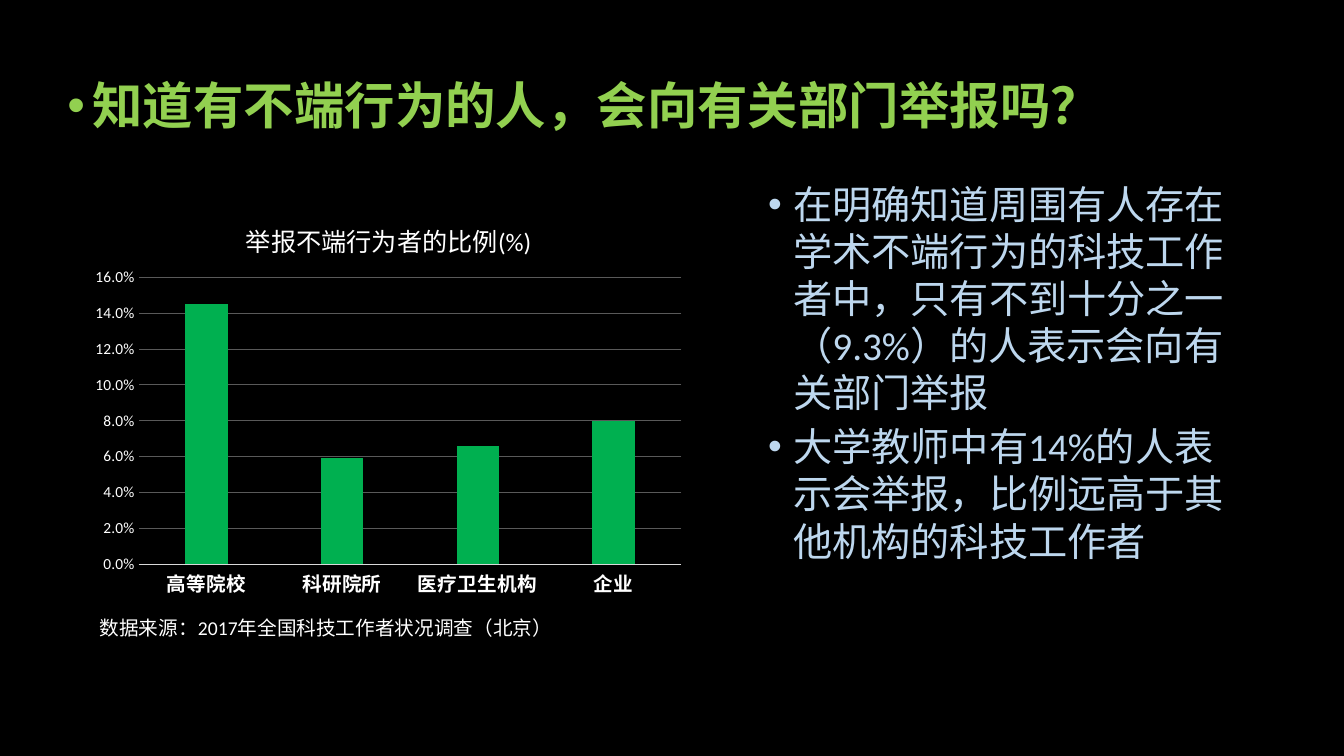
from lxml import etree
from pptx import Presentation
from pptx.chart.data import CategoryChartData
from pptx.dml.color import RGBColor
from pptx.enum.chart import XL_CHART_TYPE, XL_TICK_MARK
from pptx.oxml import parse_xml
from pptx.oxml.ns import nsdecls, qn
from pptx.util import Inches, Pt

COLUMN = XL_CHART_TYPE.COLUMN_CLUSTERED
NO_TICK = XL_TICK_MARK.NONE
BLACK = RGBColor(0x00, 0x00, 0x00)
WHITE = RGBColor(0xFF, 0xFF, 0xFF)
LIME = RGBColor(0x92, 0xD0, 0x50)
GREEN = RGBColor(0x00, 0xB0, 0x50)
PALE_BLUE = RGBColor(0xBD, 0xD7, 0xEE)
AXIS_GREY = RGBColor(0xD9, 0xD9, 0xD9)
GRID_GREY = RGBColor(0x59, 0x59, 0x59)
LATIN, CJK = "Calibri", "Noto Sans CJK SC"


def style_font(font, size, color, name=LATIN, bold=False):
    font.size, font.bold, font.name = Pt(size), bold, name
    font.color.rgb = color


def add_text(box, paragraphs, size, color, name=LATIN, bold=False, indent=None, before=0, spacing=1.0):
    """Add a text box; an indent (inches) makes its paragraphs bulleted."""
    tf = s.shapes.add_textbox(*[Inches(v) for v in box]).text_frame
    tf.word_wrap = True
    for i, text in enumerate(paragraphs):
        p = tf.add_paragraph() if i else tf.paragraphs[0]
        p.text = text
        p.space_before, p.line_spacing = Pt(before), spacing
        font = p.runs[0].font
        style_font(font, size, color, name, bold)
        etree.SubElement(p.runs[0]._r.get_or_add_rPr(), qn("a:ea")).set("typeface", CJK)
        if indent:
            pPr = p._p.get_or_add_pPr()
            pPr.set("marL", str(Inches(indent)))
            pPr.set("indent", str(Inches(-0.25)))
            etree.SubElement(pPr, qn("a:buFont")).set("typeface", "Arial")
            etree.SubElement(pPr, qn("a:buChar")).set("char", "•")


prs = Presentation()
prs.slide_width, prs.slide_height = Inches(13.33), Inches(7.5)
s = prs.slides.add_slide(prs.slide_layouts[6])
s.background.fill.solid()
s.background.fill.fore_color.rgb = BLACK

# Heading
add_text((0.57, 0.57, 11.5, 0.95), ["知道有不端行为的人，会向有关部门举报吗？"],
         36, LIME, name=CJK, bold=True, indent=0.25, before=10, spacing=1.2)

# Data source
add_text((0.89, 6.06, 4.76, 0.34), ["数据来源：2017年全国科技工作者状况调查（北京）"], 14, WHITE)

# Column chart
data = CategoryChartData(number_format="###0.0%")
data.categories = ["高等院校", "科研院所", "医疗卫生机构", "企业"]
data.add_series("Series 1", [0.145, 0.059, 0.066, 0.08])
chart = s.shapes.add_chart(COLUMN, Inches(0.83), Inches(1.99), Inches(6.05), Inches(4.01), data).chart
style_font(chart.font, 10, WHITE)
chart.has_legend = False
chart.has_title = True
p = chart.chart_title.text_frame.paragraphs[0]
p.text = "举报不端行为者的比例(%)"
style_font(p.runs[0].font, 18, WHITE)

plot = chart.plots[0]
plot.vary_by_categories = False
plot.gap_width, plot.overlap = 219, -27
bars = plot.series[0].format.fill
bars.solid()
bars.fore_color.rgb = GREEN

# Chart axes
cat_axis, val_axis = chart.category_axis, chart.value_axis
for axis in (cat_axis, val_axis):
    axis.major_tick_mark = axis.minor_tick_mark = NO_TICK
style_font(cat_axis.tick_labels.font, 14, WHITE, bold=True)
style_font(val_axis.tick_labels.font, 11, WHITE)
val_axis.tick_labels.number_format = "###0.0%"
val_axis.tick_labels.number_format_is_linked = False
val_axis.minimum_scale, val_axis.maximum_scale, val_axis.major_unit = 0, 0.16, 0.02
val_axis.format.line.fill.background()
for line, color in ((cat_axis.format.line, AXIS_GREY), (val_axis.major_gridlines.format.line, GRID_GREY)):
    line.color.rgb, line.width = color, Pt(0.75)

# Plot area position, as fractions of the chart
area = chart._chartSpace.chart.plotArea
for old in area.findall(qn("c:layout")):
    area.remove(old)
fractions = "".join(f'<c:{key} val="{val}"/>' for key, val in (
    ("layoutTarget", "inner"), ("xMode", "edge"), ("yMode", "edge"),
    ("x", 0.09), ("y", 0.19), ("w", 0.89), ("h", 0.71)))
area.insert(0, parse_xml(f'<c:layout {nsdecls("c")}><c:manualLayout>{fractions}</c:manualLayout></c:layout>'))

# Findings
add_text((7.02, 1.74, 5.36, 4.01),
         ["在明确知道周围有人存在学术不端行为的科技工作者中，只有不到十分之一（9.3%）的人表示会向有关部门举报",
          "大学教师中有14%的人表示会举报，比例远高于其他机构的科技工作者"],
         28, PALE_BLUE, indent=0.75, before=5)

prs.save("out.pptx")
